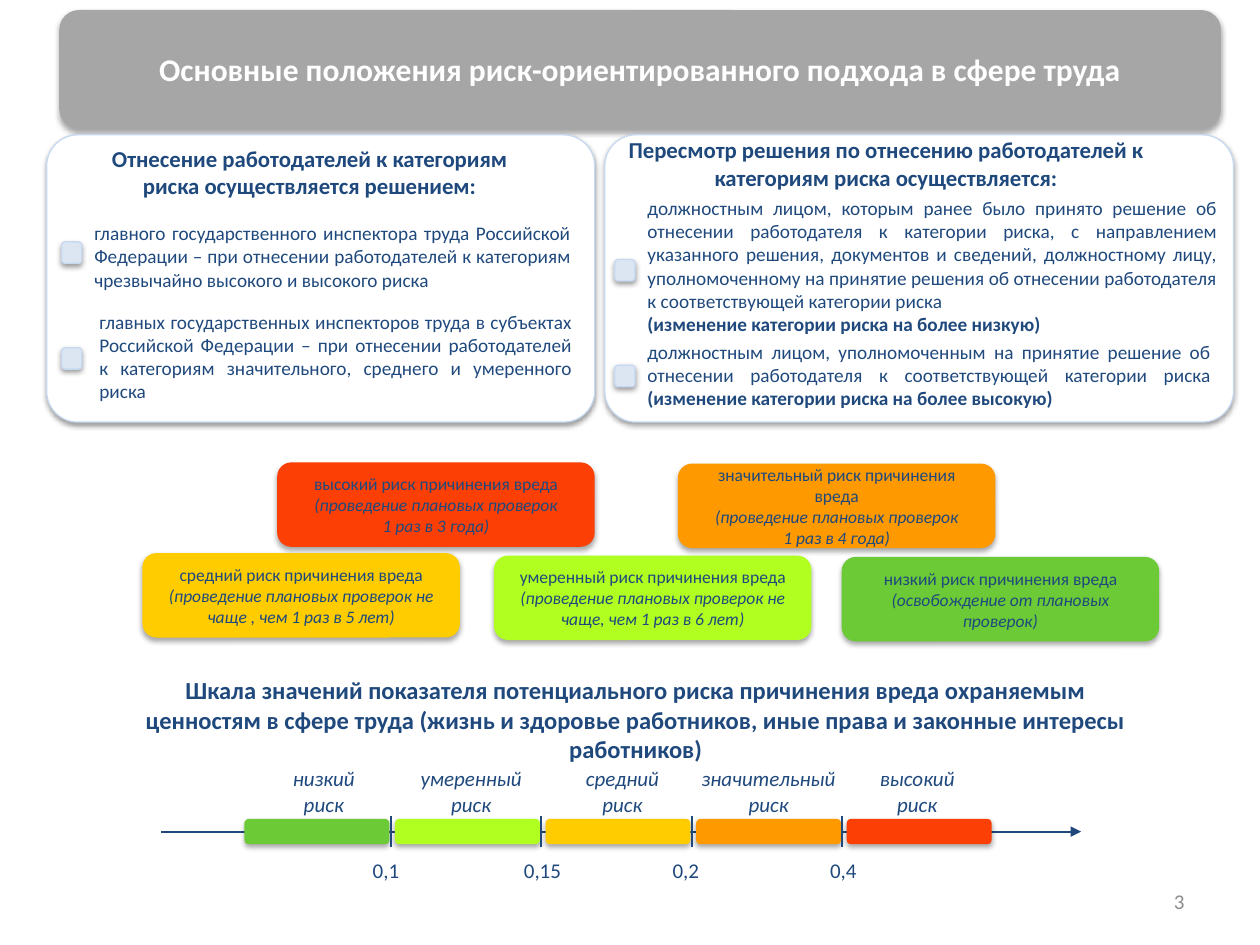
from lxml import etree
from pptx import Presentation
from pptx.dml.color import RGBColor
from pptx.enum.shapes import MSO_CONNECTOR, MSO_SHAPE
from pptx.enum.text import MSO_ANCHOR, PP_ALIGN
from pptx.oxml.ns import qn
from pptx.util import Inches, Pt

ROUNDED = MSO_SHAPE.ROUNDED_RECTANGLE
STRAIGHT = MSO_CONNECTOR.STRAIGHT
LEFT, CENTER, RIGHT, JUSTIFY = PP_ALIGN.LEFT, PP_ALIGN.CENTER, PP_ALIGN.RIGHT, PP_ALIGN.JUSTIFY
TOP, MIDDLE = MSO_ANCHOR.TOP, MSO_ANCHOR.MIDDLE

NAVY, WHITE, GREY = "1F497D", "FFFFFF", "A6A6A6"
PALE, BORDER, MUTED = "DCE6F2", "C6D9F1", "8C8C8C"
RED, ORANGE, YELLOW, LIME, GREEN = "FC3F04", "FF9900", "FFCC00", "B0FF21", "6BCA36"

TITLE = "Основные положения риск-ориентированного подхода в сфере труда"
SCALE_TITLE = (
    "Шкала значений показателя потенциального риска причинения вреда охраняемым "
    "ценностям в сфере труда (жизнь и здоровье работников, иные права и законные "
    "интересы работников)"
)

PANELS = [
    {
        "at": (4.8, 1.07, 4.99, 2.28),
        "heading": "Пересмотр решения по отнесению работодателей к категориям риска осуществляется:",
        "heading_at": (4.8, 1.03, 4.46, 0.54),
        "bullet_left": 4.88,
        "items": [
            (2.06, (5.04, 1.51, 4.72, 1.21), [
                [("должностным лицом, которым ранее было принято решение об отнесении "
                  "работодателя к категории риска, с направлением указанного решения, "
                  "документов и сведений, должностному лицу, уполномоченному на принятие "
                  "решения об отнесении работодателя к соответствующей категории риска", "")],
                [("(изменение категории риска на более низкую)", "b")],
            ]),
            (2.9, (5.04, 2.65, 4.67, 0.66), [
                [("должностным лицом, уполномоченным на принятие решение об отнесении "
                  "работодателя к соответствующей категории риска ", ""),
                 ("(изменение категории риска на более высокую)", "b")],
            ]),
        ],
    },
    {
        "at": (0.37, 1.07, 4.35, 2.28),
        "heading": "Отнесение работодателей к категориям риска осуществляется решением:",
        "heading_at": (0.62, 1.1, 3.67, 0.54),
        "bullet_left": 0.49,
        "items": [
            (1.92, (0.65, 1.71, 3.98, 0.66),
             "главного государственного инспектора труда Российской Федерации – при "
             "отнесении работодателей к категориям чрезвычайно высокого и высокого риска"),
            (2.76, (0.69, 2.41, 3.95, 0.84),
             "главных государственных инспекторов труда в субъектах Российской Федерации – "
             "при отнесении работодателей к категориям значительного, среднего и умеренного риска"),
        ],
    },
]

CARD_WIDTH, CARD_HEIGHT = 2.52, 0.67
CARDS = [
    (2.2, 3.67, RED, "высокий", "(проведение плановых проверок\n1 раз в 3 года)"),
    (1.13, 4.39, YELLOW, "средний", "(проведение плановых проверок не чаще , чем 1 раз в 5 лет)"),
    (3.92, 4.41, LIME, "умеренный", "(проведение плановых проверок не чаще, чем 1 раз в 6 лет)"),
    (5.38, 3.68, ORANGE, "значительный", "(проведение плановых проверок\n1 раз в 4 года)"),
    (6.68, 4.42, GREEN, "низкий", "(освобождение от плановых проверок)"),
]

AXIS_LEFT, AXIS_RIGHT, AXIS_Y = 1.28, 8.58, 6.6
BAR_LEFT, BAR_WIDTH, BAR_HEIGHT = 1.94, 1.15, 0.2
FIRST_TICK, TICK_HALF, STEP = 3.1, 0.12, 4.78 / 4
LABEL_WIDTH = 1.5
SCALE = [
    ("низкий", GREEN, 2.57),
    ("умеренный", LIME, 3.74),
    ("средний", YELLOW, 4.94),
    ("значительный", ORANGE, 6.1),
    ("высокий", RED, 7.28),
]
THRESHOLDS = [("0,1", 2.86), ("0,15", 4.06), ("0,2", 5.24), ("0,4", 6.49)]


def color(value):
    return RGBColor.from_string(value)


def write(shape, text, size=11, ink=NAVY, style="", align=CENTER, anchor=TOP,
          wrap=True, side=0.1):
    frame = shape.text_frame
    frame.word_wrap = wrap
    frame.vertical_anchor = anchor
    frame.margin_left = frame.margin_right = Inches(side)
    frame.margin_top = frame.margin_bottom = Inches(0.05)
    paragraphs = [[(text, style)]] if isinstance(text, str) else text
    for index, spans in enumerate(paragraphs):
        para = frame.add_paragraph() if index else frame.paragraphs[0]
        para.alignment = align
        for words, look in spans:
            for number, line in enumerate(words.split("\n")):
                if number:
                    para.add_line_break()
                if not line:
                    continue
                span = para.add_run()
                span.text = line
                span.font.name = "Calibri"
                span.font.size = Pt(size)
                span.font.color.rgb = color(ink)
                span.font.bold = "b" in look
                span.font.italic = "i" in look


def add_text(page, at, text, **style):
    box = page.shapes.add_textbox(*map(Inches, at))
    write(box, text, **style)


def add_box(page, at, fill, border=None, radius=0.167):
    box = page.shapes.add_shape(ROUNDED, *map(Inches, at))
    box.adjustments[0] = radius
    box.fill.solid()
    box.fill.fore_color.rgb = color(fill)
    if border:
        box.line.color.rgb = color(border)
        box.line.width = Pt(0.75)
    else:
        box.line.fill.background()
    box.shadow.inherit = False
    effects = box._element.spPr.find(qn("a:effectLst"))
    shade = etree.SubElement(effects, qn("a:outerShdw"), blurRad=str(Pt(3.1)),
                             dist=str(Pt(1.6 if border else 1.8)), dir="5400000", rotWithShape="0")
    tone = etree.SubElement(shade, qn("a:srgbClr"), val="000000")
    etree.SubElement(tone, qn("a:alpha"), val="38000" if border else "35000")
    return box


def add_line(page, start, end, arrow=False):
    line = page.shapes.add_connector(STRAIGHT, *map(Inches, start + end))
    line.line.color.rgb = color(NAVY)
    line.line.width = Pt(1.25)
    if arrow:
        etree.SubElement(line.line._get_or_add_ln(), qn("a:tailEnd"), type="triangle")
    etree.SubElement(line._element.spPr, qn("a:effectLst"))


def add_panel(page, panel):
    add_box(page, panel["at"], WHITE, BORDER, 0.108)
    add_text(page, panel["heading_at"], panel["heading"], size=13, style="b")
    for bullet_top, at, text in panel["items"]:
        add_box(page, (panel["bullet_left"], bullet_top, 0.16, 0.17), PALE, BORDER)
        add_text(page, at, text, align=JUSTIFY)


def add_scale(page):
    add_text(page, (0.89, 5.31, 8.31, 0.68), SCALE_TITLE, size=14, style="b", side=0.12)
    add_line(page, (AXIS_LEFT, AXIS_Y), (AXIS_RIGHT, AXIS_Y), arrow=True)
    for index, (name, fill, center) in enumerate(SCALE):
        left = BAR_LEFT + index * STEP
        add_box(page, (left, AXIS_Y - BAR_HEIGHT / 2, BAR_WIDTH, BAR_HEIGHT), fill)
        add_text(page, (center - LABEL_WIDTH / 2, 6.03, LABEL_WIDTH, 0.39),
                 name + "\nриск", size=12, style="i")
    for index, (value, left) in enumerate(THRESHOLDS):
        x = FIRST_TICK + index * STEP
        add_line(page, (x, AXIS_Y - TICK_HALF), (x, AXIS_Y + TICK_HALF))
        add_text(page, (left, 6.76, 0.5, 0.3), value, size=12, align=LEFT, wrap=False)


def main():
    deck = Presentation()
    deck.slide_width, deck.slide_height = Inches(10), Inches(7.5)
    page = deck.slides.add_slide(deck.slide_layouts[6])
    title = add_box(page, (0.47, 0.08, 9.22, 0.94), GREY)
    write(title, TITLE, size=18, ink=WHITE, style="b", anchor=MIDDLE)
    for panel in PANELS:
        add_panel(page, panel)
    for left, top, fill, level, checks in CARDS:
        card = add_box(page, (left, top, CARD_WIDTH, CARD_HEIGHT), fill)
        write(card, [[(level + " риск причинения вреда\n", ""), (checks, "i")]],
              size=10, anchor=MIDDLE, side=0.14)
    add_scale(page)
    add_text(page, (7.17, 6.95, 2.33, 0.4), "3", size=12, ink=MUTED, align=RIGHT, anchor=MIDDLE)
    deck.save("out.pptx")


if __name__ == "__main__":
    main()
